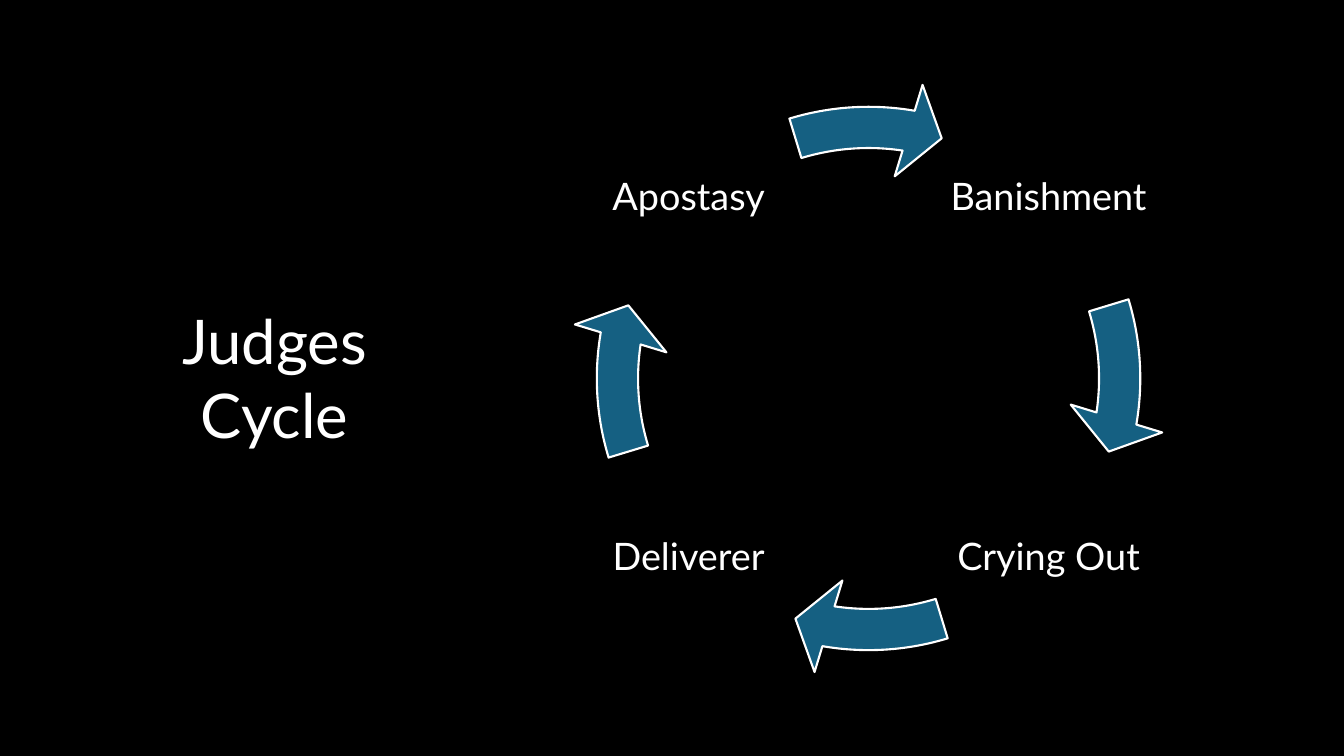
from pptx import Presentation
from pptx.dml.color import RGBColor
from pptx.enum.shapes import MSO_SHAPE
from pptx.enum.text import MSO_ANCHOR, MSO_AUTO_SIZE, PP_ALIGN
from pptx.util import Inches, Pt

FONT = "Lato"
WHITE, BLACK, BLUE = "FFFFFF", "000000", "156082"
# Clockwise from the top right: label, column, row
STAGES = [
    ("Banishment", 1, 0),
    ("Crying Out", 1, 1),
    ("Deliverer", 0, 1),
    ("Apostasy", 0, 0),
]
# Adjustment units: one degree is 0.6, a full turn is 216
QUARTER, TURN = 54, 216


def paint(fill, color):
    fill.solid()
    fill.fore_color.rgb = RGBColor.from_string(color)


def write(frame, text, size):
    frame.text = text
    frame.word_wrap = True
    para = frame.paragraphs[0]
    para.alignment = PP_ALIGN.CENTER
    font = para.runs[0].font
    font.name, font.size = FONT, Pt(size)
    paint(font.fill, WHITE)
    return para


def add_title(slide, left, top, width, height):
    title = slide.shapes.title
    title.left, title.top = Inches(left), Inches(top)
    title.width, title.height = Inches(width), Inches(height)
    frame = title.text_frame
    write(frame, "Judges Cycle", 44)
    frame.vertical_anchor = MSO_ANCHOR.TOP
    frame.auto_size = MSO_AUTO_SIZE.SHAPE_TO_FIT_TEXT


def add_label(slide, text, left, top, size):
    box = slide.shapes.add_textbox(
        Inches(left), Inches(top), Inches(size), Inches(size))
    frame = box.text_frame
    frame.margin_left = frame.margin_right = Inches(0.04)
    frame.margin_top = frame.margin_bottom = Inches(0.04)
    frame.vertical_anchor = MSO_ANCHOR.MIDDLE
    write(frame, text, 27).line_spacing = 0.9


def add_arrow(slide, step, left, top, size):
    """Draw the arc that leaves the given quarter of the ring."""
    arrow = slide.shapes.add_shape(
        MSO_SHAPE.CIRCULAR_ARROW,
        Inches(left), Inches(top), Inches(size), Inches(size))
    turn = step * QUARTER
    end, start = (5.51 + turn) % TURN, (205.84 + turn) % TURN
    for i, value in enumerate((0.069, 4.65, end, start, 0.08)):
        arrow.adjustments[i] = value
    arrow.shadow.inherit = False
    paint(arrow.fill, BLUE)
    paint(arrow.line.fill, WHITE)
    arrow.line.width = Pt(1.5)


def add_cycle(slide, left, top, size):
    pad, label, pitch = 0.13, 2.1, 3.57
    for step, (text, col, row) in enumerate(STAGES):
        add_label(slide, text, left + pad + col * pitch,
                  top + pad + row * pitch, label)
        add_arrow(slide, step, left, top, size)


def main():
    deck = Presentation()
    deck.slide_width, deck.slide_height = Inches(13.33), Inches(7.5)
    slide = deck.slides.add_slide(deck.slide_layouts[5])
    paint(slide.background.fill, BLACK)
    add_cycle(slide, 5.65, 0.79, 5.93)
    add_title(slide, 1.17, 2.96, 3.11, 1.58)
    deck.save("out.pptx")


if __name__ == "__main__":
    main()
